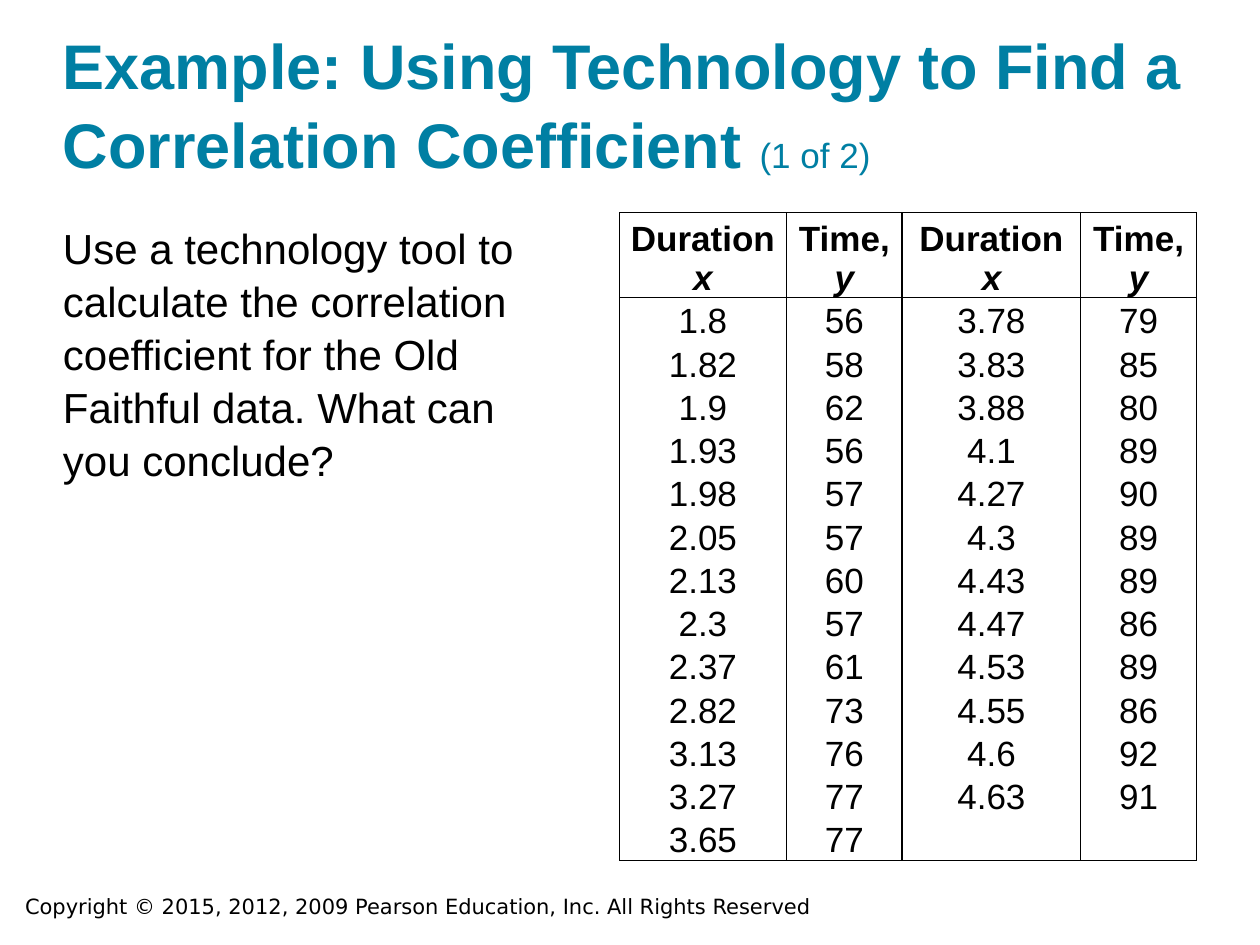
import pptx
import pptx.util
import pptx.dml.color
import pptx.enum.text
from lxml import etree

Pt = pptx.util.Pt
ANCHOR = pptx.enum.text.MSO_ANCHOR
ALIGN = pptx.enum.text.PP_ALIGN
HUES = {"title": "007FA3", "ink": "000000", "head": "FFFFFF"}
NS = "http://schemas.openxmlformats.org/drawingml/2006/main"

WIDTHS = [95.4, 66.2, 102, 66.2]
HEADS = [("Duration", "x"), ("Time,", "y")] * 2
DATA = [
    ("1.8", "56", "3.78", "79"),
    ("1.82", "58", "3.83", "85"),
    ("1.9", "62", "3.88", "80"),
    ("1.93", "56", "4.1", "89"),
    ("1.98", "57", "4.27", "90"),
    ("2.05", "57", "4.3", "89"),
    ("2.13", "60", "4.43", "89"),
    ("2.3", "57", "4.47", "86"),
    ("2.37", "61", "4.53", "89"),
    ("2.82", "73", "4.55", "86"),
    ("3.13", "76", "4.6", "92"),
    ("3.27", "77", "4.63", "91"),
    ("3.65", "77", "", ""),
]


def color(name):
    return pptx.dml.color.RGBColor.from_string(HUES[name])


def add_run(para, text, size, hue="ink", bold=False, italic=False, face="Arial"):
    run = para.add_run()
    run.text = text
    font = run.font
    font.name, font.size, font.bold, font.italic = face, Pt(size), bold, italic
    font.color.rgb = color(hue)


def add_box(slide, box, inset=True):
    frame = slide.shapes.add_textbox(*map(Pt, box)).text_frame
    frame.word_wrap = True
    if not inset:
        frame.margin_left = frame.margin_right = 0
        frame.margin_top = frame.margin_bottom = 0
    return frame


def add_title(slide, box):
    frame = add_box(slide, box, inset=False)
    frame.vertical_anchor = ANCHOR.BOTTOM
    para = frame.paragraphs[0]
    para.line_spacing = 1.05
    add_run(para, "Example: Using Technology to Find a Correlation Coefficient ",
            36, "title", bold=True)
    add_run(para, "(1 of 2)", 20, "title")


def add_body(slide, box):
    para = add_box(slide, box, inset=False).paragraphs[0]
    para.line_spacing = 1.05
    add_run(para, "Use a technology tool to calculate the correlation coefficient "
            "for the Old Faithful data. What can you conclude?", 24)


def add_foot(slide, box):
    para = add_box(slide, box).paragraphs[0]
    add_run(para, "Copyright © 2015, 2012, 2009 Pearson Education, Inc. "
            "All Rights Reserved", 12, face="DejaVu Sans")


def set_edges(cell, edges):
    props = cell._tc.get_or_add_tcPr()
    for side in "LRTB":
        line = etree.SubElement(props, f"{{{NS}}}ln{side}")
        width = edges.get(side, 0)
        if width:
            line.set("w", str(Pt(width)))
            fill = etree.SubElement(line, f"{{{NS}}}solidFill")
            etree.SubElement(fill, f"{{{NS}}}srgbClr", val=HUES["ink"])
        else:
            etree.SubElement(line, f"{{{NS}}}noFill")


def style_cell(cell, row, col, last):
    cell.vertical_anchor = ANCHOR.BOTTOM
    cell.margin_left = cell.margin_right = cell.margin_top = Pt(0.7)
    cell.margin_bottom = 0
    edges = {"L": 1 if col == 2 else 0.5, "R": 1 if col == 1 else 0.5}
    if row < 2:
        edges["T"] = 0.5
    if row in (0, last):
        edges["B"] = 0.5
    set_edges(cell, edges)
    if row == 0:
        cell.fill.solid()
        cell.fill.fore_color.rgb = color("head")
    else:
        cell.fill.background()


def add_data(slide, box):
    left, top, width, height = box
    last = len(DATA)
    table = slide.shapes.add_table(last + 1, len(WIDTHS), *map(Pt, box)).table
    table.first_row = table.horz_banding = False
    for col, span in zip(table.columns, WIDTHS):
        col.width = Pt(span)
    head = 48.3
    for row, line in enumerate(table.rows):
        line.height = Pt((height - head) / last if row else head)
    for row, texts in enumerate([HEADS] + DATA):
        for col, text in enumerate(texts):
            cell = table.cell(row, col)
            style_cell(cell, row, col, last)
            para = cell.text_frame.paragraphs[0]
            para.alignment = ALIGN.CENTER
            if row == 0:
                label, sign = text
                add_run(para, label, 20, bold=True)
                para.add_line_break()
                add_run(para, sign, 20, bold=True, italic=True)
            elif text:
                add_run(para, text, 20)


def main():
    deck = pptx.Presentation()
    deck.slide_width, deck.slide_height = Pt(720), Pt(540)
    slide = deck.slides.add_slide(deck.slide_layouts[6])
    add_foot(slide, (7.2, 507, 564, 21.6))
    add_title(slide, (36, 17.3, 648, 86.4))
    add_body(slide, (36, 126, 282, 150))
    add_data(slide, (354, 121.5, sum(WIDTHS), 367.6))
    deck.save("out.pptx")


if __name__ == "__main__":
    main()
